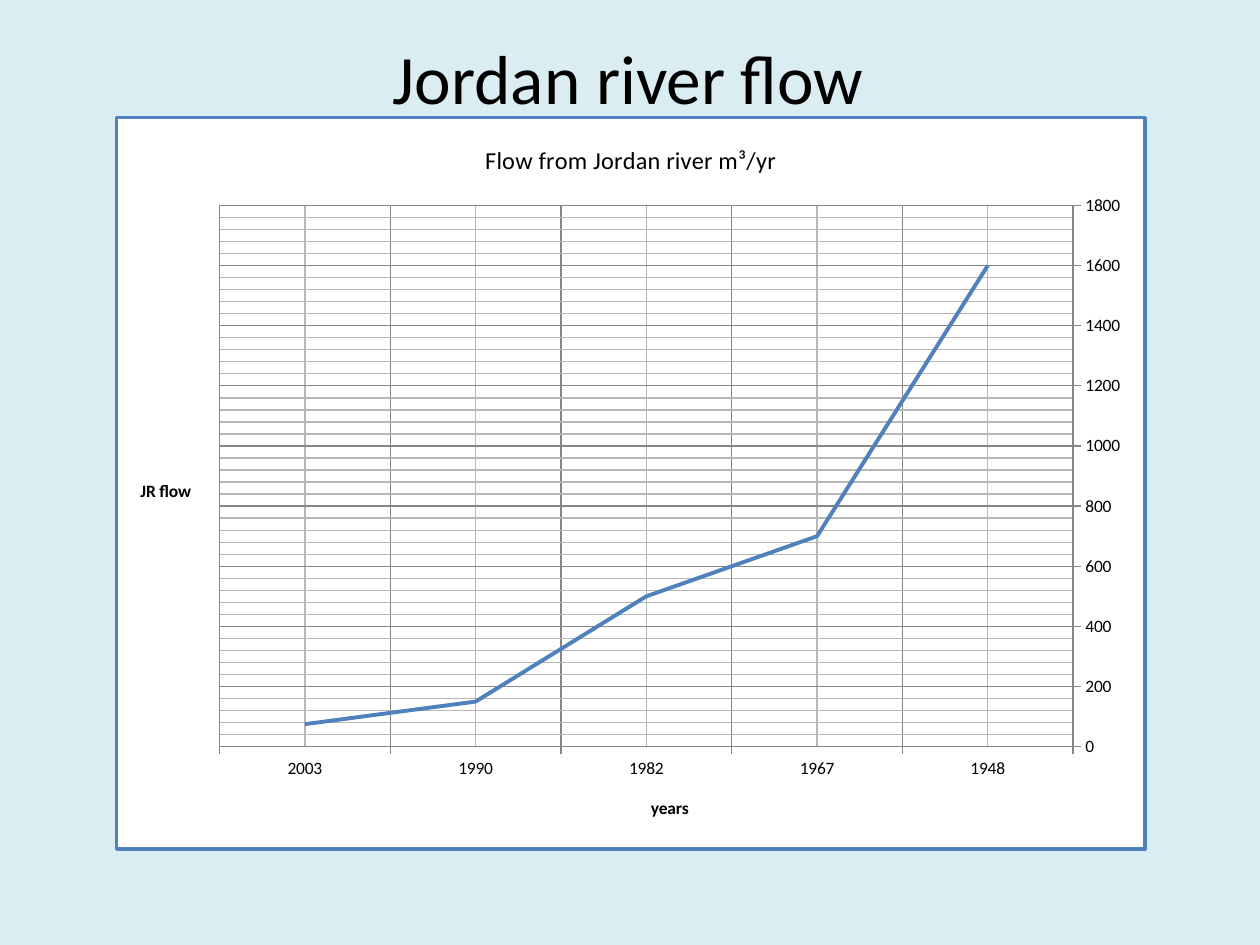
from lxml import etree
from pptx import Presentation
from pptx.chart.data import CategoryChartData
from pptx.dml.color import RGBColor
from pptx.enum.chart import XL_CHART_TYPE, XL_TICK_MARK
from pptx.enum.text import MSO_ANCHOR, PP_ALIGN
from pptx.oxml import parse_xml
from pptx.oxml.ns import nsdecls, qn
from pptx.util import Emu, Pt

PX = 914400 / 126
FONT = "Calibri"
BLACK = RGBColor(0x00, 0x00, 0x00)
WHITE = RGBColor(0xFF, 0xFF, 0xFF)
PALE_BLUE = RGBColor(0xD9, 0xED, 0xF3)
BLUE = RGBColor(0x4F, 0x81, 0xBD)
MAJOR_GREY = RGBColor(0x86, 0x86, 0x86)
MINOR_GREY = RGBColor(0xB7, 0xB7, 0xB7)

CHART_BOX = (115, 116, 1032, 735)
YEARS = ["1948", "1967", "1982", "1990", "2003"]
FLOWS = [1600, 700, 500, 150, 75]


def px(*lengths):
    return [Emu(round(length * PX)) for length in lengths]


def add_span(para, text, size, bold=False):
    span = para.add_run()
    span.text = text
    span.font.name = FONT
    span.font.size = Pt(size)
    span.font.bold = bold
    span.font.color.rgb = BLACK


def add_title(page):
    box = page.shapes.add_textbox(*px(63, 38, 1113, 77))
    frame = box.text_frame
    frame.word_wrap = True
    frame.vertical_anchor = MSO_ANCHOR.MIDDLE
    para = frame.paragraphs[0]
    para.alignment = PP_ALIGN.CENTER
    para._p.get_or_add_pPr().set("rtl", "1")
    add_span(para, "Jordan river flow ", 39.6)


def set_layout(element, index, **settings):
    """Put a manual chart layout at the given child index of the element."""
    for old in element.findall(qn("c:layout")):
        element.remove(old)
    layout = etree.Element(qn("c:layout"))
    manual = etree.SubElement(layout, qn("c:manualLayout"))
    for name, value in settings.items():
        etree.SubElement(manual, qn(f"c:{name}")).set("val", str(value))
    element.insert(index, layout)


def chart_format(line_color, line_width, fill_color=None):
    """Return chart formatting XML for parts that have no format object."""
    def solid(color):
        return f'<a:solidFill><a:srgbClr val="{color}"/></a:solidFill>'

    fill = solid(fill_color) if fill_color else ""
    return parse_xml(
        f'<c:spPr {nsdecls("c", "a")}>{fill}'
        f'<a:ln w="{int(Pt(line_width))}">{solid(line_color)}</a:ln></c:spPr>'
    )


def style_axis(axis, title):
    axis.major_tick_mark = XL_TICK_MARK.CROSS
    axis.has_major_gridlines = True
    axis.has_minor_gridlines = True
    for line in (axis.format.line, axis.major_gridlines.format.line):
        line.color.rgb = MAJOR_GREY
        line.width = Pt(0.75)
    minor_gridlines = axis._element.find(qn("c:minorGridlines"))
    minor_gridlines.append(chart_format(MINOR_GREY, 0.75))
    add_span(axis.axis_title.text_frame.paragraphs[0], title, 10, bold=True)


def add_flow_chart(page):
    data = CategoryChartData()
    data.categories = YEARS
    data.add_series("Series 1", FLOWS)
    chart = page.shapes.add_chart(
        XL_CHART_TYPE.LINE_STACKED, *px(*CHART_BOX), data
    ).chart
    chart.font.name = FONT
    chart.font.size = Pt(10)
    chart.font.color.rgb = BLACK
    chart.has_legend = False
    chart.has_title = True
    add_span(chart.chart_title.text_frame.paragraphs[0],
             "Flow from Jordan river m³/yr", 14)
    chart_body = chart._chartSpace.find(qn("c:chart"))
    chart_body.addnext(chart_format(BLUE, 2, WHITE))

    plot = chart.plots[0]
    plot.vary_by_categories = False
    series = plot.series[0]
    series.smooth = False
    series.format.line.color.rgb = BLUE
    series.format.line.width = Pt(2.25)

    years, flow = chart.category_axis, chart.value_axis
    style_axis(years, "years")
    years.reverse_order = True
    style_axis(flow, "JR flow ")
    flow.minimum_scale, flow.maximum_scale = 0, 1800
    flow.major_unit, flow.minor_unit = 200, 40

    flow_title = flow.axis_title
    direction = flow_title.text_frame._txBody.find(qn("a:bodyPr"))
    direction.set("rot", "0")
    direction.set("vert", "horz")
    set_layout(flow_title._element, 1, xMode="edge", yMode="edge", x=0.02, y=0.49)
    set_layout(chart_body.find(qn("c:plotArea")), 0, layoutTarget="inner",
               xMode="edge", yMode="edge", x=0.1, y=0.12, w=0.83, h=0.74)


def main():
    deck = Presentation()
    deck.slide_width, deck.slide_height = px(1260, 945)
    page = deck.slides.add_slide(deck.slide_layouts[6])
    page.background.fill.solid()
    page.background.fill.fore_color.rgb = PALE_BLUE
    add_flow_chart(page)
    add_title(page)
    deck.save("out.pptx")


if __name__ == "__main__":
    main()
